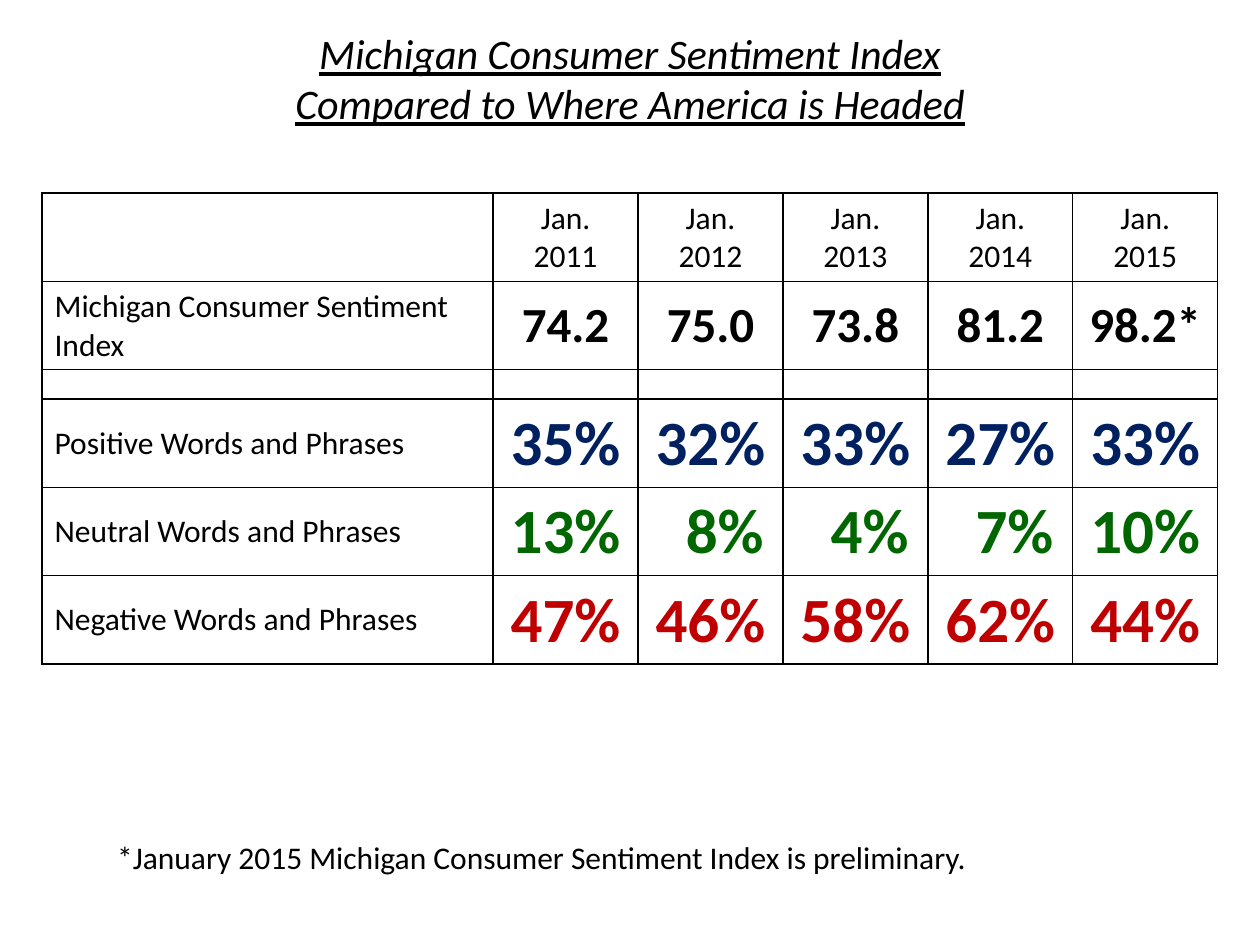
from lxml import etree
from pptx import Presentation
from pptx.dml.color import RGBColor
from pptx.enum.text import MSO_ANCHOR, PP_ALIGN
from pptx.oxml.ns import qn
from pptx.util import Pt

LEFT, CENTER = PP_ALIGN.LEFT, PP_ALIGN.CENTER
MIDDLE = MSO_ANCHOR.MIDDLE
COLORS = {"black": "000000", "positive": "002060", "neutral": "006600", "negative": "C00000"}
ROW_H, GAP_H = 50.4, 16.8
LABEL_W, YEAR_W = 257.8, 82.8
DIGIT_INDENT = 16.3  # lines single-digit percentages up with the others


def write(tf, lines, size, color="black", align=LEFT, bold=False, italic=False):
    tf.text = "\n".join(lines)
    for p in tf.paragraphs:
        p.alignment = align
        for r in p.runs:
            r.font.name = "Calibri"
            r.font.size = Pt(size)
            r.font.bold = bold
            r.font.italic = italic
            r.font.underline = italic
            r.font.color.rgb = RGBColor.from_string(COLORS[color])


def add_borders(cell):
    tc_pr = cell._tc.get_or_add_tcPr()
    for i, side in enumerate(("lnL", "lnR", "lnT", "lnB")):
        ln = etree.Element(qn(f"a:{side}"), w=str(Pt(1)))
        fill = etree.SubElement(ln, qn("a:solidFill"))
        etree.SubElement(fill, qn("a:srgbClr"), val=COLORS["black"])
        tc_pr.insert(i, ln)


prs = Presentation()
prs.slide_width, prs.slide_height = Pt(720), Pt(540)
s = prs.slides.add_slide(prs.slide_layouts[6])

title = s.shapes.add_textbox(Pt(33.8), Pt(12.2), Pt(652.4), Pt(65.5))
title.text_frame.word_wrap = True
write(title.text_frame,
      ["Michigan Consumer Sentiment Index", "Compared to Where America is Headed"],
      24, align=CENTER, italic=True)

# label, values, value size, value colour, bold values
rows = [
    ("", [f"Jan. {year}" for year in range(2011, 2016)], 18, "black", False),
    ("Michigan Consumer Sentiment Index", ["74.2", "75.0", "73.8", "81.2", "98.2*"],
     28, "black", True),
    ("", [""] * 5, 8, "black", False),
    ("Positive Words and Phrases", ["35%", "32%", "33%", "27%", "33%"], 36, "positive", True),
    ("Neutral Words and Phrases", ["13%", "8%", "4%", "7%", "10%"], 36, "neutral", True),
    ("Negative Words and Phrases", ["47%", "46%", "58%", "62%", "44%"], 36, "negative", True),
]
heights = [ROW_H if any(values) else GAP_H for _, values, *_ in rows]
widths = [LABEL_W] + [YEAR_W] * 5

table = s.shapes.add_table(len(rows), len(widths), Pt(24), Pt(110.4),
                           Pt(sum(widths)), Pt(sum(heights))).table
table.first_row = table.horz_banding = False
for column, width in zip(table.columns, widths):
    column.width = Pt(width)
for row, height in zip(table.rows, heights):
    row.height = Pt(height)

for i, (label, values, size, color, bold) in enumerate(rows):
    for j, text in enumerate([label] + values):
        cell = table.cell(i, j)
        cell.fill.background()
        cell.vertical_anchor = MIDDLE
        add_borders(cell)
        if not text:
            end = cell.text_frame.paragraphs[0]._p.get_or_add_endParaRPr()
            end.set("sz", str(size * 100))
        elif j == 0:
            write(cell.text_frame, [text], 18)
        else:
            write(cell.text_frame, [text], size, color, CENTER, bold)
            if len(text) == 2:
                cell.margin_left = Pt(7.2 + DIGIT_INDENT)

note = s.shapes.add_textbox(Pt(59.8), Pt(475.2), Pt(514), Pt(28.8))
note.text_frame.word_wrap = False
write(note.text_frame,
      ["*January 2015 Michigan Consumer Sentiment Index is preliminary."], 18)

prs.save("out.pptx")
